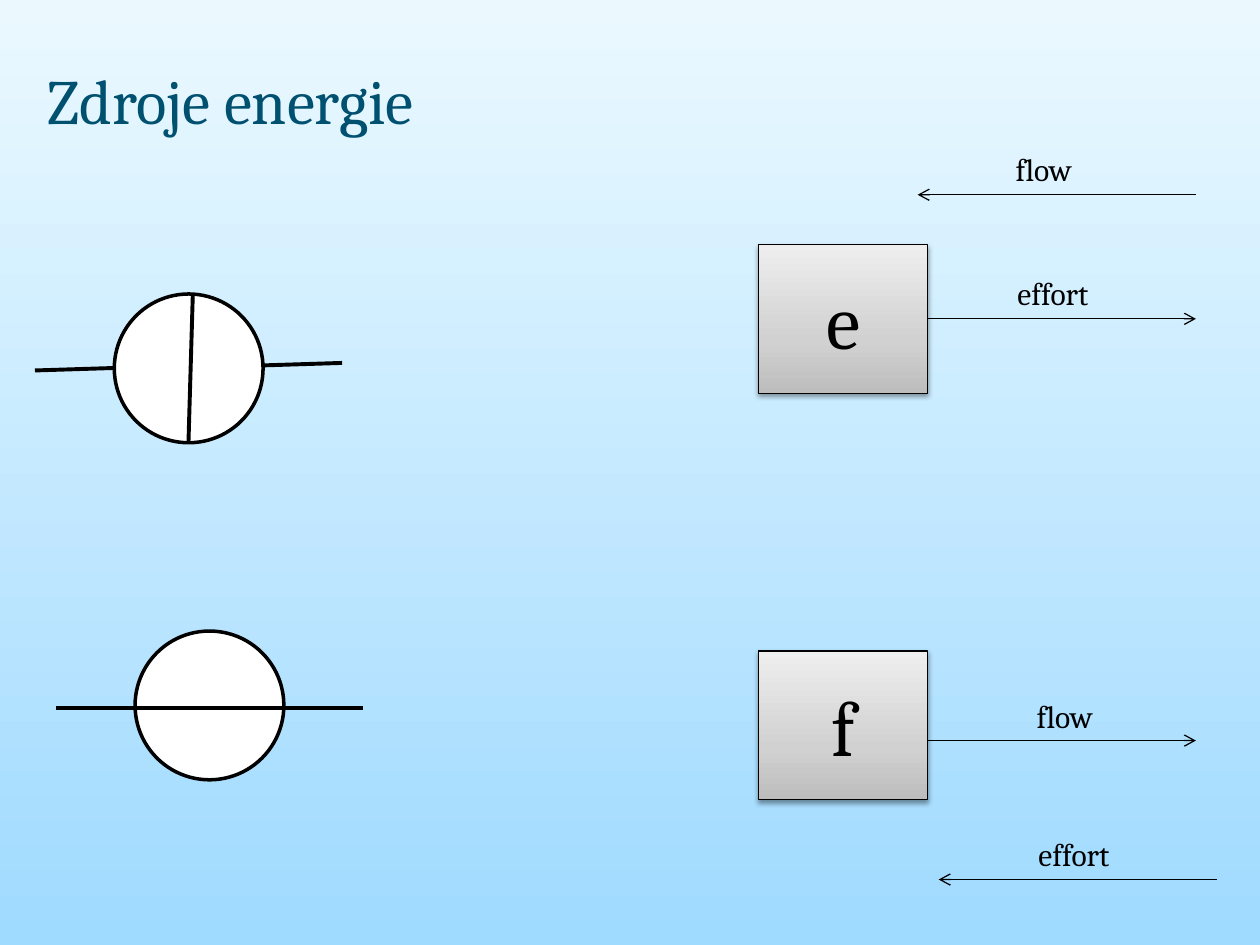
from copy import deepcopy

from lxml.etree import SubElement
from pptx import Presentation
from pptx.dml.color import RGBColor
from pptx.enum.shapes import MSO_CONNECTOR as Link, MSO_SHAPE as Shape
from pptx.enum.text import MSO_ANCHOR as Anchor, MSO_AUTO_SIZE as Fit, PP_ALIGN as Align
from pptx.oxml.ns import qn
from pptx.util import Pt

COLORS = {
    "title": "005070",
    "ink": "000000",
    "paper": "FFFFFF",
    "sky_top": "EBF9FF",
    "sky_bottom": "9FDAFF",
    "steel_dark": "BDBDBD",
    "steel_mid": "D1D1D1",
    "steel_light": "EEEEEE",
}


def rgb(name):
    return RGBColor.from_string(COLORS[name])


def write_text(frame, text, size=18, color="ink", font="Cambria",
               align=Align.LEFT, anchor=Anchor.TOP, wrap=True, fit=Fit.NONE):
    frame.word_wrap = wrap
    frame.auto_size = fit
    frame.vertical_anchor = anchor
    para = frame.paragraphs[0]
    para.alignment = align
    span = para.add_run()
    span.text = text
    span.font.name = font
    span.font.size = Pt(size)
    span.font.color.rgb = rgb(color)


def paint_gradient(fill, holder, stops, angle):
    """Fill with (position, color) stops; the angle runs counter-clockwise."""
    fill.gradient()
    fill.gradient_angle = angle
    stop_list = next(holder.iter(qn("a:gsLst")))
    while len(stop_list) < len(stops):
        stop_list.append(deepcopy(stop_list[-1]))
    for stop, (position, color) in zip(fill.gradient_stops, stops):
        stop.position = position
        stop.color.rgb = rgb(color)


class SlideBuilder:
    """Holds the style, the current slide and the group being filled."""

    thin, rim, thick = 0.75, 2, 2.25
    box_size = (96.5, 85)
    circle_size = 85

    def __init__(self, page):
        self.page = page
        self.group = None

    def start_group(self):
        self.group = self.page.shapes.add_group_shape().shapes

    def background(self):
        paint_gradient(self.page.background.fill, self.page.element,
                       [(0, "sky_top"), (1, "sky_bottom")], 270)

    def title(self, text, left, top, width, height):
        title = self.page.shapes.title
        title.left, title.top = Pt(left), Pt(top)
        title.width, title.height = Pt(width), Pt(height)
        write_text(title.text_frame, text, size=36, color="title", anchor=Anchor.MIDDLE)

    def outline(self, shape, width):
        shape.line.color.rgb = rgb("ink")
        shape.line.width = Pt(width)

    def circle(self, left, top):
        circle = self.group.add_shape(Shape.OVAL, Pt(left), Pt(top),
                                      Pt(self.circle_size), Pt(self.circle_size))
        circle.shadow.inherit = False
        circle.fill.solid()
        circle.fill.fore_color.rgb = rgb("paper")
        self.outline(circle, self.rim)

    def line(self, start, end, width=thick, arrow=False):
        line = self.group.add_connector(Link.STRAIGHT, *map(Pt, start + end))
        self.outline(line, width)
        properties = line._element.spPr
        if arrow:
            SubElement(properties.find(qn("a:ln")), qn("a:tailEnd"), type="arrow")
        SubElement(properties, qn("a:effectLst"))
        return line

    def source_box(self, text, left, top):
        width, height = self.box_size
        box = self.group.add_shape(Shape.RECTANGLE, Pt(left), Pt(top), Pt(width), Pt(height))
        properties = box._element.spPr
        paint_gradient(box.fill, properties,
                       [(0, "steel_dark"), (0.35, "steel_mid"), (1, "steel_light")], 90)
        self.outline(box, self.thin)
        # Soft shadow straight below the box
        box.shadow.inherit = False
        shadow = SubElement(properties.find(qn("a:effectLst")), qn("a:outerShdw"),
                            blurRad=str(Pt(3.1)), dist=str(Pt(1.6)),
                            dir="5400000", rotWithShape="0")
        shade = SubElement(shadow, qn("a:srgbClr"), val=COLORS["ink"])
        SubElement(shade, qn("a:alpha"), val="38000")
        write_text(box.text_frame, text, size=44, align=Align.CENTER, anchor=Anchor.MIDDLE)
        return box

    def label(self, text, left, top, width):
        box = self.group.add_textbox(Pt(left), Pt(top), Pt(width), Pt(29))
        write_text(box.text_frame, text, wrap=False, fit=Fit.SHAPE_TO_FIT_TEXT)

    def arrow(self, start, end):
        return self.line(start, end, width=self.thin, arrow=True)


def main():
    deck = Presentation()
    deck.slide_width, deck.slide_height = Pt(720), Pt(540)
    builder = SlideBuilder(deck.slides.add_slide(deck.slide_layouts[5]))
    builder.background()
    builder.title("Zdroje energie", 20, 17.3, 647.3, 79.2)

    # Effort source symbol
    builder.start_group()
    builder.circle(65.3, 168)
    builder.line((20, 211.7), (65.3, 210.3))
    builder.line((150.3, 208.8), (195.5, 207.4))
    builder.line((107.7, 253), (110.2, 168))

    # Flow source symbol
    builder.start_group()
    builder.circle(77.2, 360.6)
    builder.line((32, 404.6), (207.4, 404.6))

    # Effort source block
    builder.start_group()
    box = builder.source_box("e", 433.6, 139.7)
    output = builder.arrow((530.1, 182.2), (683.4, 182.2))
    output.begin_connect(box, 3)
    builder.arrow((683.4, 111.3), (524.4, 111.3))
    builder.label("flow", 573.3, 82.3, 49)
    builder.label("effort", 574.3, 153, 59)

    # Flow source block
    builder.start_group()
    builder.source_box("f", 433.6, 372)
    builder.arrow((695.4, 502.6), (536.4, 502.6))
    builder.arrow((530.1, 423.2), (683.4, 423.2))
    builder.label("flow", 585.3, 394.6, 49)
    builder.label("effort", 586.3, 473.8, 59)

    deck.save("out.pptx")


if __name__ == "__main__":
    main()
